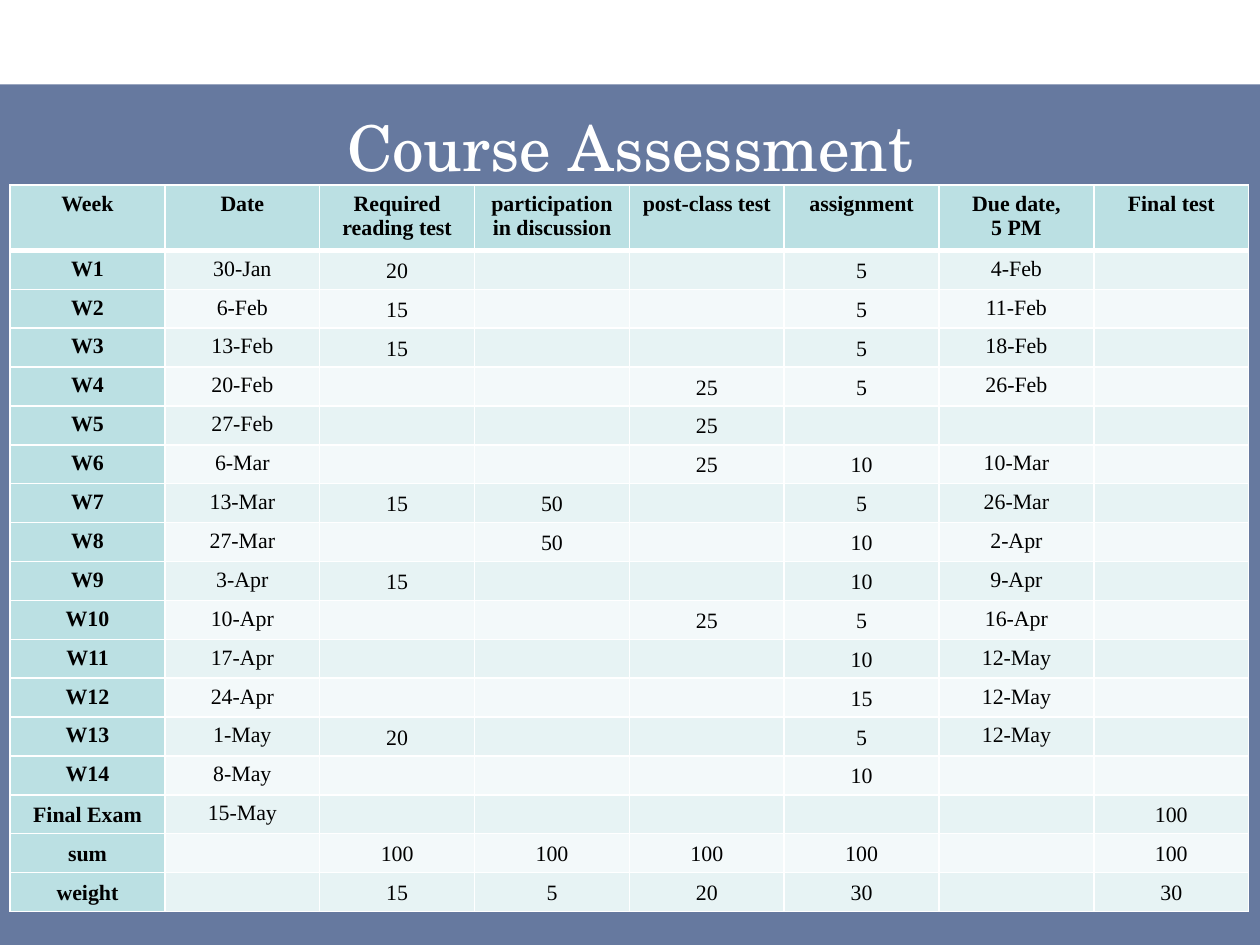
"""Build the course assessment slide with its weekly grading table."""
from typing import NamedTuple

from lxml.etree import SubElement
from pptx import Presentation
from pptx.dml.color import RGBColor
from pptx.enum.shapes import MSO_SHAPE
from pptx.enum.text import MSO_ANCHOR, PP_ALIGN
from pptx.oxml.ns import qn
from pptx.util import Inches, Pt


class Row(NamedTuple):
    week: str
    date: str = ""
    reading: str = ""
    discussion: str = ""
    post_class: str = ""
    assignment: str = ""
    due: str = ""
    final: str = ""


HEADER = Row("Week", "Date", "Required reading test", "participation in discussion",
             "post-class test", "assignment", "Due date,\n5 PM", "Final test")
ROWS = [
    HEADER,
    Row("W1", "30-Jan", reading="20", assignment="5", due="4-Feb"),
    Row("W2", "6-Feb", reading="15", assignment="5", due="11-Feb"),
    Row("W3", "13-Feb", reading="15", assignment="5", due="18-Feb"),
    Row("W4", "20-Feb", post_class="25", assignment="5", due="26-Feb"),
    Row("W5", "27-Feb", post_class="25"),
    Row("W6", "6-Mar", post_class="25", assignment="10", due="10-Mar"),
    Row("W7", "13-Mar", reading="15", discussion="50", assignment="5", due="26-Mar"),
    Row("W8", "27-Mar", discussion="50", assignment="10", due="2-Apr"),
    Row("W9", "3-Apr", reading="15", assignment="10", due="9-Apr"),
    Row("W10", "10-Apr", post_class="25", assignment="5", due="16-Apr"),
    Row("W11", "17-Apr", assignment="10", due="12-May"),
    Row("W12", "24-Apr", assignment="15", due="12-May"),
    Row("W13", "1-May", reading="20", assignment="5", due="12-May"),
    Row("W14", "8-May", assignment="10"),
    Row("Final Exam", "15-May", final="100"),
    Row("sum", "", "100", "100", "100", "100", "", "100"),
    Row("weight", "", "15", "5", "20", "30", "", "30"),
]
SUMMARY_LABELS = ("Final Exam", "sum", "weight")
HEAD_FILL, BANDS = "BBE0E3", ("F3F9FA", "E7F3F4")
WHITE, BLACK, NAVY = "FFFFFF", "000000", "002060"
TABLE_W, TABLE_H, HEADER_H = 9.83, 5.58, 0.5
TEXT_PT = 12.5


def color(value: str) -> RGBColor:
    return RGBColor.from_string(value)


def add_background(s) -> None:
    sp = s.shapes.add_shape(MSO_SHAPE.RECTANGLE, 0, Inches(0.67), Inches(10), Inches(6.83))
    sp.shadow.inherit = False
    sp.line.fill.background()
    sp.fill.solid()
    sp.fill.fore_color.rgb = color(NAVY)
    rgb = sp._element.spPr.find(f"{qn('a:solidFill')}/{qn('a:srgbClr')}")
    SubElement(rgb, qn("a:alpha"), val="60000")


def add_title(s, text: str) -> None:
    sp = s.shapes.add_textbox(Inches(0.25), Inches(0.75), Inches(9.5), Inches(0.83))
    tf = sp.text_frame
    tf.word_wrap = True
    tf.vertical_anchor = MSO_ANCHOR.MIDDLE
    p = tf.paragraphs[0]
    p.text = text
    p.alignment = PP_ALIGN.CENTER
    p.font.name, p.font.size = "TeX Gyre Schola", Pt(36)
    p.font.color.rgb = color(WHITE)


def add_border(cell, side: str, points: float) -> None:
    ln = SubElement(cell._tc.get_or_add_tcPr(), qn(f"a:ln{side}"), w=str(Pt(points)))
    SubElement(SubElement(ln, qn("a:solidFill")), qn("a:srgbClr"), val=WHITE)


def fill_cell(cell, text: str, row: int, col: int) -> None:
    is_head = row == 0 or col == 0
    for side in "LRTB":
        heavy = (row, side) in ((0, "B"), (1, "T"))
        add_border(cell, side, 3 if heavy else 1)
    cell.fill.solid()
    cell.fill.fore_color.rgb = color(HEAD_FILL if is_head else BANDS[row % 2])
    cell.margin_left = cell.margin_right = Inches(0.05)
    cell.margin_top = cell.margin_bottom = Inches(0.05)
    at_bottom = text.isdigit() or text in SUMMARY_LABELS
    cell.vertical_anchor = MSO_ANCHOR.BOTTOM if at_bottom else MSO_ANCHOR.TOP
    cell.text_frame.text = text
    for p in cell.text_frame.paragraphs:
        p.alignment = PP_ALIGN.CENTER
        p.font.name, p.font.size, p.font.bold = "Times New Roman", Pt(TEXT_PT), is_head
        p.font.color.rgb = color(BLACK)
        if not text:
            SubElement(p._p, qn("a:endParaRPr"), sz=str(int(TEXT_PT * 100)))


def add_assessment_table(s, rows: list[Row]) -> None:
    table = s.shapes.add_table(len(rows), len(HEADER), Inches(0.08), Inches(1.47),
                               Inches(TABLE_W), Inches(TABLE_H)).table
    for column in table.columns:
        column.width = Inches(TABLE_W / len(HEADER))
    for r, row in enumerate(rows):
        body_h = (TABLE_H - HEADER_H) / (len(rows) - 1)
        table.rows[r].height = Inches(body_h if r else HEADER_H)
        for c, text in enumerate(row):
            fill_cell(table.cell(r, c), text, r, c)


def main() -> None:
    prs = Presentation()
    prs.slide_width, prs.slide_height = Inches(10), Inches(7.5)
    s = prs.slides.add_slide(prs.slide_layouts[6])
    add_background(s)
    add_title(s, "Course Assessment")
    add_assessment_table(s, ROWS)
    prs.save("out.pptx")


if __name__ == "__main__":
    main()
